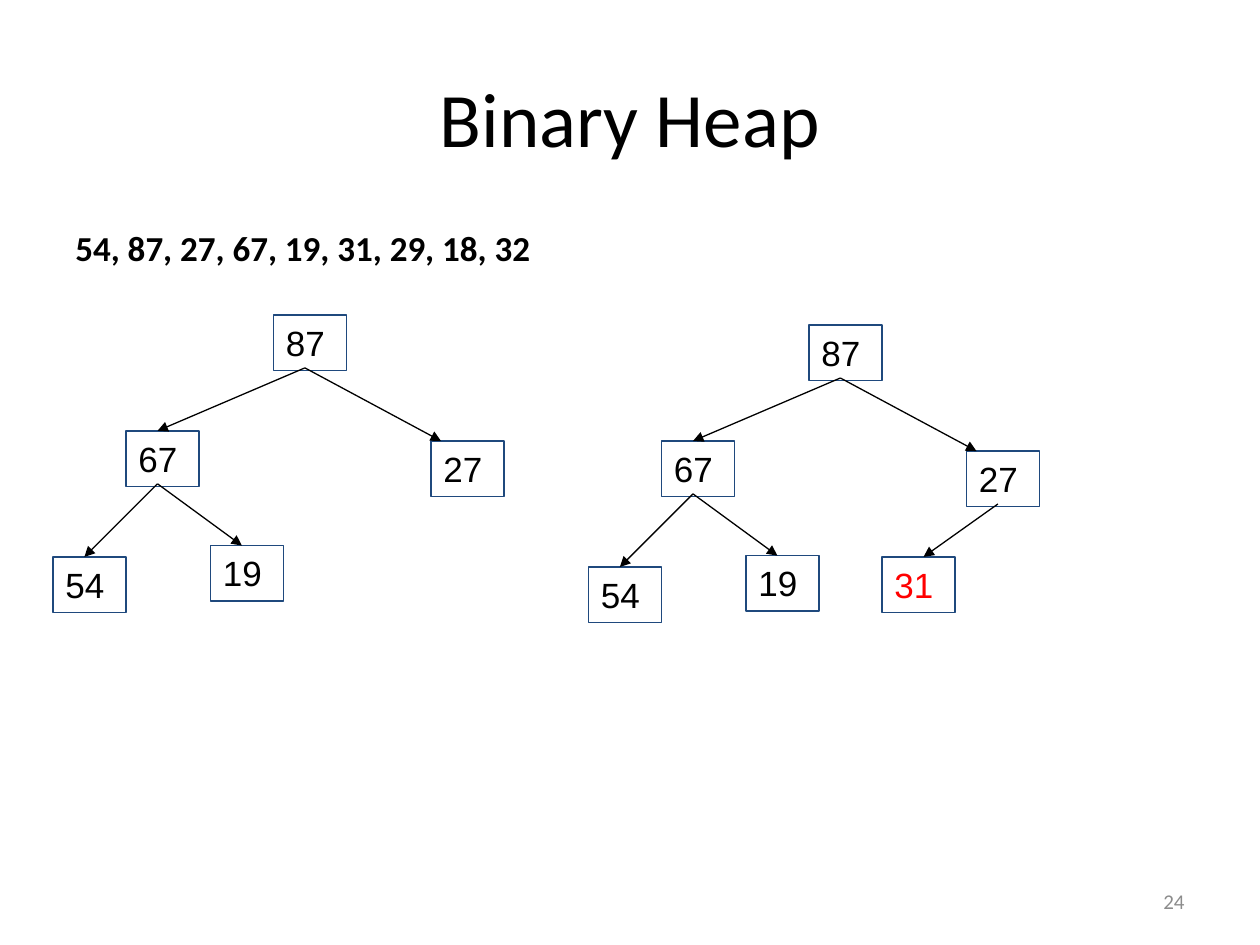
from dataclasses import dataclass
from typing import Optional

from pptx import Presentation
from pptx.dml.color import RGBColor
from pptx.enum.shapes import MSO_CONNECTOR as Link, MSO_SHAPE as Shape
from pptx.enum.text import MSO_ANCHOR as Anchor, PP_ALIGN as Align
from pptx.oxml.ns import qn
from pptx.util import Inches, Pt

BOX_W, BOX_H = 0.58, 0.44
STEM_X, STEM_Y = 0.25, 0.42  # where arrows leave a node
SHIFT = (4.25, 0.08)  # from the first tree to the second


@dataclass
class Node:
    text: str
    x: float
    y: float
    up: Optional[str] = None
    tip: float = STEM_X  # where the arrow meets the top edge
    color: str = "000000"


TREE = [
    Node("87", 2.17, 2.5),
    Node("67", 1, 3.42, "87"),
    Node("27", 3.42, 3.5, "87", 0.08),
    Node("54", 0.42, 4.42, "67"),
    Node("19", 1.67, 4.33, "67"),
]
ADDED = Node("31", 2.75, 4.34, "27", 0.33, "FF0000")


def paint(target, color: str) -> None:
    target.rgb = RGBColor.from_string(color)


def write(frame, text: str, size: float, font: str, color: str = "000000",
          align=Align.LEFT, anchor=Anchor.TOP, bold: bool = False) -> None:
    frame.word_wrap = True
    frame.vertical_anchor = anchor
    frame.text = text
    par = frame.paragraphs[0]
    par.alignment = align
    par.font.size, par.font.name, par.font.bold = Pt(size), font, bold
    paint(par.font.color, color)


def add_text(slide, at: tuple, text: str, size: float, **style) -> None:
    box = slide.shapes.add_textbox(*map(Inches, at))
    write(box.text_frame, text, size, "Calibri", **style)


def draw_node(shapes, node: Node, dx: float, dy: float) -> None:
    box = shapes.add_shape(Shape.RECTANGLE, Inches(node.x + dx),
                           Inches(node.y + dy), Inches(BOX_W), Inches(BOX_H))
    box.shadow.inherit = False
    box.fill.background()
    box.line.width = Pt(0.75)
    paint(box.line.color, "1F497D")
    write(box.text_frame, node.text, 20, "Arial", node.color)


def draw_arrow(shapes, up: Node, node: Node, dx: float, dy: float) -> None:
    line = shapes.add_connector(
        Link.STRAIGHT,
        Inches(up.x + STEM_X + dx), Inches(up.y + STEM_Y + dy),
        Inches(node.x + node.tip + dx), Inches(node.y + dy))
    line.line.width = Pt(0.75)
    paint(line.line.color, "000000")
    ln = line.line._get_or_add_ln()
    ln.append(ln.makeelement(qn("a:tailEnd"), {"type": "triangle"}))
    props = line._element.spPr
    props.append(props.makeelement(qn("a:effectLst"), {}))


def draw_tree(shapes, nodes: list[Node], dx: float = 0, dy: float = 0) -> None:
    by_text = {node.text: node for node in TREE}
    for node in nodes:
        draw_node(shapes, node, dx, dy)
    for node in nodes:
        if node.up:
            draw_arrow(shapes, by_text[node.up], node, dx, dy)


def main() -> None:
    prs = Presentation()
    prs.slide_width, prs.slide_height = Inches(10), Inches(7.5)
    slide = prs.slides.add_slide(prs.slide_layouts[5])

    title = slide.shapes.title
    title.left, title.top = Inches(0.5), Inches(0.3)
    title.width, title.height = Inches(9), Inches(1.25)
    write(title.text_frame, "Binary Heap", 44, "Calibri",
          align=Align.CENTER, anchor=Anchor.MIDDLE)

    add_text(slide, (0.5, 1.75, 8.83, 4.95),
             "54, 87, 27, 67, 19, 31, 29, 18, 32", 20, bold=True)
    add_text(slide, (7.17, 6.95, 2.33, 0.4), "24", 12, color="8C8C8C",
             align=Align.RIGHT, anchor=Anchor.MIDDLE)

    for shift in ((0, 0), SHIFT):
        draw_tree(slide.shapes.add_group_shape().shapes, TREE, *shift)
    draw_tree(slide.shapes, [ADDED], *SHIFT)

    prs.save("out.pptx")


if __name__ == "__main__":
    main()
